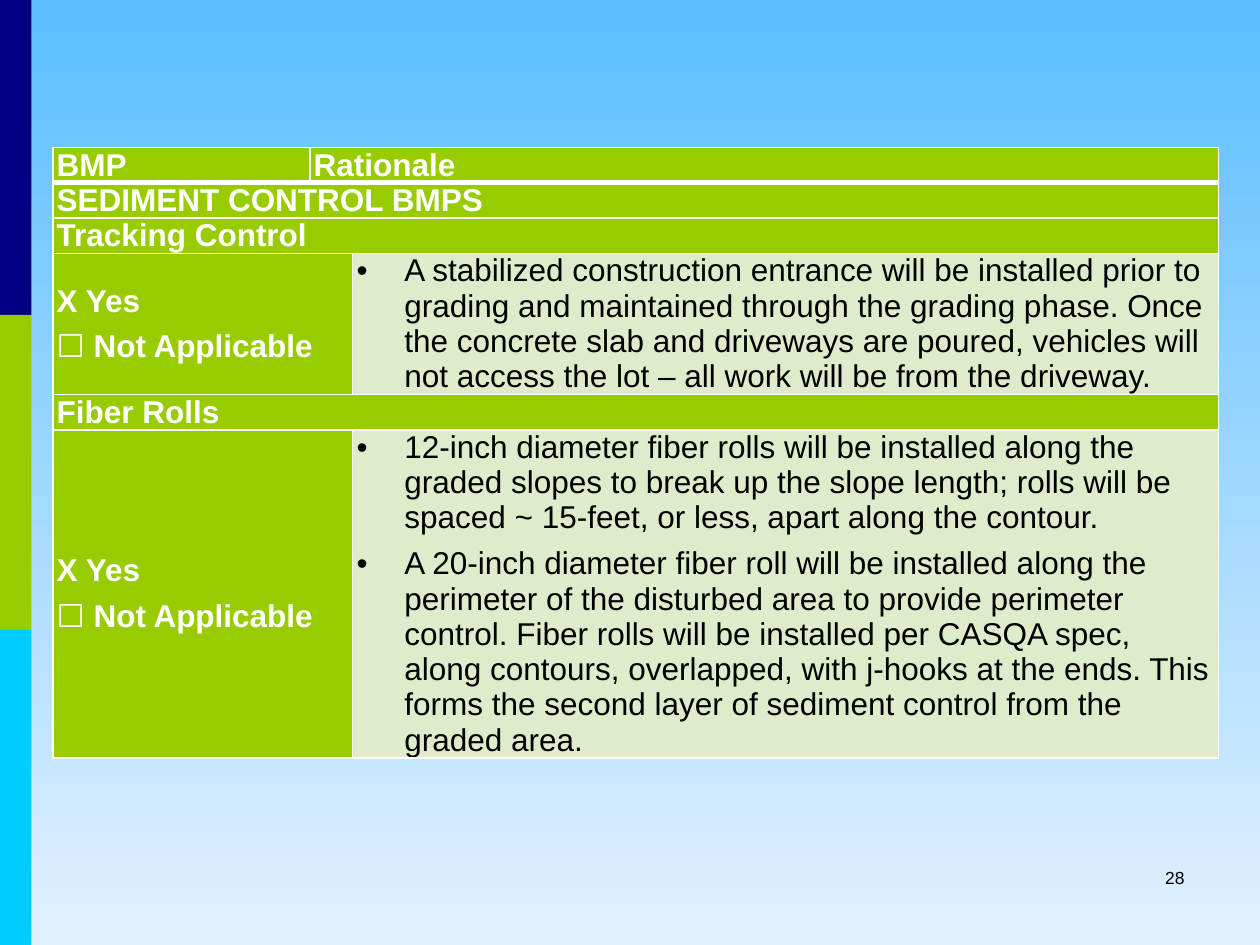
from dataclasses import dataclass

from lxml import etree
from pptx import Presentation
from pptx.dml.color import RGBColor
from pptx.enum.shapes import MSO_SHAPE
from pptx.enum.text import MSO_ANCHOR, PP_ALIGN
from pptx.oxml.ns import qn
from pptx.util import Inches, Pt

RECTANGLE = MSO_SHAPE.RECTANGLE
TOP, MIDDLE = MSO_ANCHOR.TOP, MSO_ANCHOR.MIDDLE
RIGHT = PP_ALIGN.RIGHT


@dataclass(frozen=True)
class Theme:
    font: str = "Arial"
    body_size: int = 18
    number_size: int = 10
    sky_top: str = "5ABEFF"
    sky_bottom: str = "E1F0FF"
    navy: str = "000080"
    green: str = "99CC00"
    cyan: str = "00CCFF"
    pale_green: str = "DEECCC"
    white: str = "FFFFFF"
    black: str = "000000"


THEME = Theme()


def style_runs(paragraph, size, color, bold=False):
    for run in paragraph.runs:
        run.font.name = THEME.font
        run.font.size = Pt(size)
        run.font.bold = bold
        run.font.color.rgb = RGBColor.from_string(color)


def add_border(cell, side, width):
    properties = cell._tc.get_or_add_tcPr()
    border = etree.SubElement(properties, qn(f"a:ln{side}"), w=str(Pt(width)))
    fill = etree.SubElement(border, qn("a:solidFill"))
    etree.SubElement(fill, qn("a:srgbClr"), val=THEME.white)


prs = Presentation()
prs.slide_width, prs.slide_height = Inches(10), Inches(7.5)
slide = prs.slides.add_slide(prs.slide_layouts[6])

sky = slide.background.fill
sky.gradient()
sky.gradient_angle = 270
for stop, color in zip(sky.gradient_stops, (THEME.sky_top, THEME.sky_bottom)):
    stop.color.rgb = RGBColor.from_string(color)

for index, color in enumerate((THEME.navy, THEME.green, THEME.cyan)):
    side_band = slide.shapes.add_shape(
        RECTANGLE, 0, Inches(2.5 * index), Inches(0.25), Inches(2.5))
    side_band.shadow.inherit = False
    side_band.fill.solid()
    side_band.fill.fore_color.rgb = RGBColor.from_string(color)
    side_band.line.fill.background()

ANSWER = "X Yes\n☐ Not Applicable"
TRACKING = (
    "A stabilized construction entrance will be installed prior to grading and "
    "maintained through the grading phase. Once the concrete slab and driveways "
    "are poured, vehicles will not access the lot – all work will be from the driveway."
)
FIBER_ROLLS = (
    "12-inch diameter fiber rolls will be installed along the graded slopes to "
    "break up the slope length; rolls will be spaced ~ 15-feet, or less, apart "
    "along the contour.\n"
    "A 20-inch diameter fiber roll will be installed along the perimeter of the "
    "disturbed area to provide perimeter control. Fiber rolls will be installed per "
    "CASQA spec, along contours, overlapped, with j-hooks at the ends. This forms "
    "the second layer of sediment control from the graded area."
)
LINE_HEIGHT = 0.28
bmp_rows = [
    (LINE_HEIGHT, [("BMP", 0, 0), ("Rationale", 1, 2)]),
    (LINE_HEIGHT, [("SEDIMENT CONTROL BMPS", 0, 2)]),
    (LINE_HEIGHT, [("Tracking Control", 0, 2)]),
    (4 * LINE_HEIGHT, [(ANSWER, 0, 1), (TRACKING, 2, 2)]),
    (LINE_HEIGHT, [("Fiber Rolls", 0, 2)]),
    (2.6, [(ANSWER, 0, 1), (FIBER_ROLLS, 2, 2)]),
]
column_widths = (2.04, 0.34, 6.87)

bmp_table = slide.shapes.add_table(
    len(bmp_rows), len(column_widths), Inches(0.42), Inches(1.17),
    Inches(sum(column_widths)), Inches(sum(height for height, _ in bmp_rows))).table
for column, width in zip(bmp_table.columns, column_widths):
    column.width = Inches(width)

for row_index, (height, entries) in enumerate(bmp_rows):
    bmp_table.rows[row_index].height = Inches(height)
    for text, first, last in entries:
        cell = bmp_table.cell(row_index, first)
        if last > first:
            cell.merge(bmp_table.cell(row_index, last))
        is_rationale = first == 2
        cell.margin_left = cell.margin_right = Inches(0.03)
        cell.margin_top = cell.margin_bottom = 0
        cell.vertical_anchor = MIDDLE if first == 0 else TOP

        for side in "LRTB":
            under_header = (row_index, side) in ((0, "B"), (1, "T"))
            add_border(cell, side, 3 if under_header else 1)
        cell.fill.solid()
        cell.fill.fore_color.rgb = RGBColor.from_string(
            THEME.pale_green if is_rationale else THEME.green)

        cell.text_frame.text = text
        for paragraph in cell.text_frame.paragraphs:
            paragraph.space_before = Pt(2 if text in ("Rationale", TRACKING) else 4)
            paragraph.space_after = Pt(2)
            style_runs(paragraph, THEME.body_size,
                       THEME.black if is_rationale else THEME.white, not is_rationale)
            if is_rationale:
                properties = paragraph._p.get_or_add_pPr()
                properties.set("marL", str(Inches(0.38)))
                properties.set("indent", str(-Inches(0.38)))
                etree.SubElement(properties, qn("a:buFont"), typeface=THEME.font)
                etree.SubElement(properties, qn("a:buChar"), char="•")

page_number = slide.shapes.add_textbox(
    Inches(7.17), Inches(6.83), Inches(2.33), Inches(0.5)).text_frame
page_number.word_wrap = True
page_number.text = "28"
page_number.paragraphs[0].alignment = RIGHT
style_runs(page_number.paragraphs[0], THEME.number_size, THEME.black)

prs.save("out.pptx")
